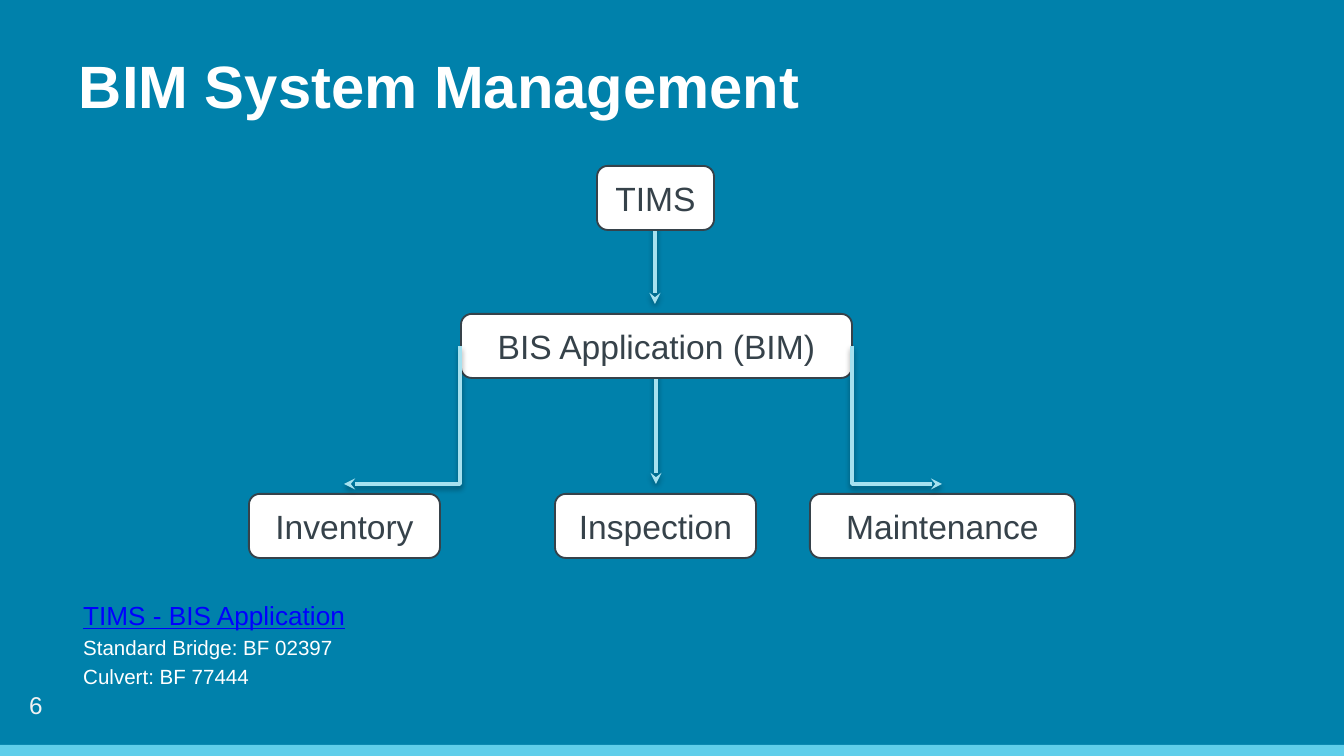
"""Build the BIM System Management slide."""
from lxml import etree
from pptx import Presentation
from pptx import util as u
from pptx.dml.color import RGBColor
from pptx.enum import shapes, text
from pptx.oxml import parse_xml
from pptx.oxml.ns import nsdecls, qn

SCALE = 914400 / 134.4
BACK = RGBColor(0x00, 0x81, 0xAB)
STRIP = RGBColor(0x5F, 0xCE, 0xEA)
ARROW = RGBColor(0xA6, 0xE1, 0xEF)
DARK = RGBColor(0x36, 0x42, 0x4A)
WHITE = RGBColor(0xFF, 0xFF, 0xFF)
PALE = RGBColor(0xF2, 0xF2, 0xF2)
LINK = RGBColor(0x00, 0x00, 0xFF)

BOX_H = 64
LEAF_TOP = 494
LEAVES = [("Inventory", 249, 191), ("Inspection", 555, 201), ("Maintenance", 810, 265)]
SHADOW = (
    f'<a:effectLst {nsdecls("a")}>'
    '<a:outerShdw blurRad="40000" dist="20000" dir="5400000" rotWithShape="0">'
    '<a:srgbClr val="000000"><a:alpha val="37000"/></a:srgbClr>'
    "</a:outerShdw></a:effectLst>"
)


def px(*vals):
    """Turn pixel lengths into EMU."""
    return [u.Emu(round(val * SCALE)) for val in vals]


def add_run(para, words, size, color, bold=False, under=False):
    """Add one formatted run to a paragraph."""
    run = para.add_run()
    run.text = words
    font = run.font
    font.name, font.size, font.bold, font.underline = "Arial", u.Pt(size), bold, under
    font.color.rgb = color


def add_title(slide, words):
    """Place and format the title."""
    title = slide.shapes.title
    title.left, title.top, title.width, title.height = px(79, 50, 1208, 106)
    frame = title.text_frame
    frame.auto_size = text.MSO_AUTO_SIZE.NONE
    frame.vertical_anchor = text.MSO_ANCHOR.TOP
    frame.margin_left = 0
    para = frame.paragraphs[0]
    para.alignment = text.PP_ALIGN.LEFT
    para.line_spacing = 0.9
    add_run(para, words, 32, WHITE, bold=True)


def add_strip(slide):
    """Draw the light strip along the bottom edge."""
    strip = slide.shapes.add_shape(shapes.MSO_SHAPE.RECTANGLE, *px(0, 745, 1344, 11))
    strip.shadow.inherit = False
    strip.fill.solid()
    strip.fill.fore_color.rgb = STRIP
    strip.line.fill.background()


def add_box(slide, words, left, top, width):
    """Draw a labelled box of the chart."""
    kind = shapes.MSO_SHAPE.FLOWCHART_ALTERNATE_PROCESS
    box = slide.shapes.add_shape(kind, *px(left, top, width, BOX_H))
    box.shadow.inherit = False
    box.fill.solid()
    box.fill.fore_color.rgb = WHITE
    box.line.color.rgb = DARK
    box.line.width = u.Pt(1)
    box.text_frame.vertical_anchor = text.MSO_ANCHOR.MIDDLE
    para = box.text_frame.paragraphs[0]
    para.alignment = text.PP_ALIGN.CENTER
    add_run(para, words, 18, DARK)


def add_arrow(slide, start, end, kind=shapes.MSO_CONNECTOR.STRAIGHT):
    """Draw a shadowed line with an arrowhead at its end."""
    arrow = slide.shapes.add_connector(kind, *px(*start, *end))
    arrow.line.color.rgb = ARROW
    arrow.line.width = u.Pt(2)
    etree.SubElement(arrow.line._get_or_add_ln(), qn("a:tailEnd"), type="stealth")
    arrow._element.spPr.append(parse_xml(SHADOW))
    return arrow


def add_bend(slide, start, end):
    """Draw an arrow that runs down and then sideways."""
    wide, high = abs(end[0] - start[0]), end[1] - start[1]
    left = (start[0] + end[0] - high) / 2
    top = (start[1] + end[1] - wide) / 2
    bend = add_arrow(slide, (left, top), (left + high, top + wide), shapes.MSO_CONNECTOR.ELBOW)
    props = bend._element.spPr
    props.find(qn("a:prstGeom")).set("prst", "bentConnector2")
    frame = props.find(qn("a:xfrm"))
    right = end[0] > start[0]
    frame.set("rot", "16200000" if right else "5400000")
    if right:
        frame.set("flipH", "1")


def add_text(slide, area, lines, anchor=text.MSO_ANCHOR.TOP):
    """Add a text box with one run on each line."""
    frame = slide.shapes.add_textbox(*px(*area)).text_frame
    frame.word_wrap = True
    frame.vertical_anchor = anchor
    for i, (words, size, color, under) in enumerate(lines):
        para = frame.add_paragraph() if i else frame.paragraphs[0]
        if i:
            para.space_before = u.Pt(2.2)
        add_run(para, words, size, color, under=under)


def main():
    """Build and save the slide."""
    deck = Presentation()
    deck.slide_width, deck.slide_height = px(1344, 756)
    slide = deck.slides.add_slide(deck.slide_layouts[5])
    slide.background.fill.solid()
    slide.background.fill.fore_color.rgb = BACK
    add_strip(slide)
    add_title(slide, "BIM System Management")
    add_arrow(slide, (655, 219), (655, 304))
    add_arrow(slide, (656, 367), (656, 484))
    add_box(slide, "TIMS", 597, 166, 117)
    add_box(slide, "BIS Application (BIM)", 461, 314, 391)
    for words, left, width in LEAVES:
        add_box(slide, words, left, LEAF_TOP, width)
    add_bend(slide, (460, 346), (344, 484))
    add_bend(slide, (852, 346), (942, 484))
    add_text(slide, (70, 593, 1228, 112), [
        ("TIMS - BIS Application", 14, LINK, True),
        ("Standard Bridge: BF 02397", 11, WHITE, False),
        ("Culvert: BF 77444", 11, WHITE, False),
    ])
    add_text(slide, (16, 685, 302, 40), [("6", 13, PALE, False)], text.MSO_ANCHOR.MIDDLE)
    deck.save("out.pptx")


if __name__ == "__main__":
    main()
